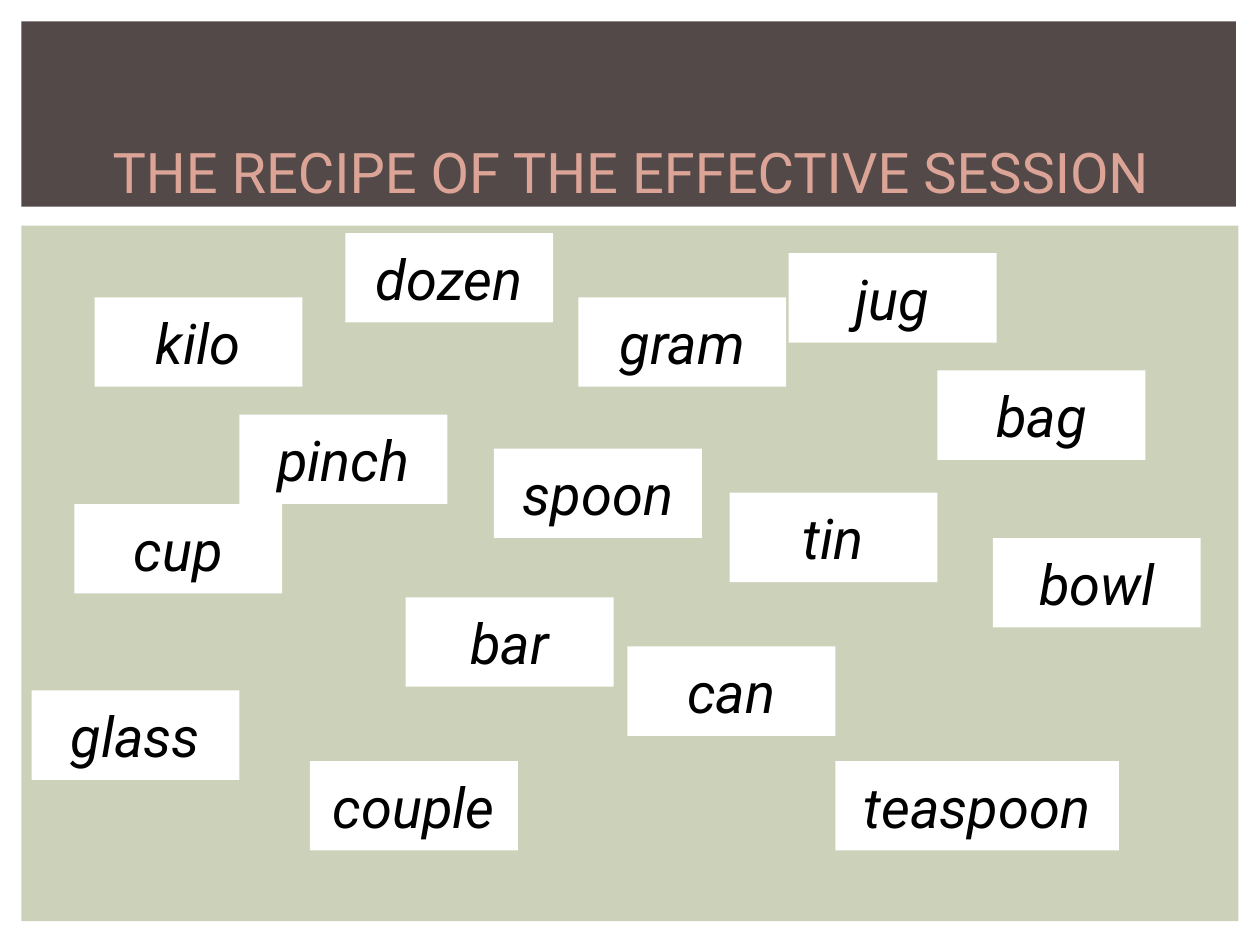
from pptx import Presentation
from pptx import util as u
from pptx.dml import color
from pptx.enum import shapes, text

COLUMNS, ROWS = 100, 75
CELL = u.Inches(10) // COLUMNS

BANNER = (1.7, 1.7, 96.4, 14.7)
BOARD = (1.7, 17.9, 96.6, 55.2)
CARD_WIDTH, CARD_HEIGHT = 16.5, 7.1
WIDE_CARDS = {"teaspoon": 22.5}
MEASURES = {
    "kilo": (5.8, 5.7),
    "spoon": (37.5, 17.7),
    "jug": (60.9, 2.2),
    "pinch": (17.3, 15),
    "dozen": (25.7, 0.6),
    "bag": (72.7, 11.5),
    "tin": (56.2, 21.2),
    "cup": (4.2, 22.1),
    "bar": (30.5, 29.5),
    "bowl": (77.1, 24.8),
    "can": (48.1, 33.4),
    "glass": (0.8, 36.9),
    "couple": (22.9, 42.5),
    "teaspoon": (64.6, 42.5),
    "gram": (44.2, 5.7),
}


def rgb(code):
    """Turn a hex string into a colour."""
    return color.RGBColor.from_string(code)


def cells(*counts):
    """Turn grid cells into slide lengths."""
    return [u.Emu(round(count * CELL)) for count in counts]


def panel(slide, box, fill):
    """Add a plain filled rectangle over a box of the grid."""
    rectangle = slide.shapes.add_shape(shapes.MSO_SHAPE.RECTANGLE, *cells(*box))
    rectangle.shadow.inherit = False
    rectangle.fill.solid()
    rectangle.fill.fore_color.rgb = rgb(fill)
    rectangle.line.fill.background()
    return rectangle


def write(holder, words, ink="000000", size=32, italic=False, face="Roboto"):
    """Write centred words in a shape or placeholder."""
    frame = holder.text_frame
    frame.word_wrap = True
    frame.auto_size = text.MSO_AUTO_SIZE.NONE
    frame.vertical_anchor = text.MSO_ANCHOR.MIDDLE
    paragraph = frame.paragraphs[0]
    paragraph.alignment = text.PP_ALIGN.CENTER
    run = paragraph.add_run()
    run.text = words
    run.font.name = face
    run.font.size = u.Pt(size)
    run.font.italic = italic
    run.font.color.rgb = rgb(ink)


def add_banner(slide, box, heading):
    """Draw the dark banner with the title along its lower edge."""
    panel(slide, box, "534949")
    title = slide.shapes.title
    slide.shapes.element.append(title.element)
    left, top = box[:2]
    title.left, title.top, title.width, title.height = cells(
        left - 1.6, top + 7.5, COLUMNS, 8.8)
    write(title, heading, ink="DCA496")


def add_board(slide, box, measures):
    """Draw the green board with a white card for each measure."""
    panel(slide, box, "CCD1B9")
    left, top = box[:2]
    for measure, (across, down) in measures.items():
        width = WIDE_CARDS.get(measure, CARD_WIDTH)
        card = panel(slide, (left + across, top + down, width, CARD_HEIGHT), "FFFFFF")
        write(card, measure, italic=True)


def main():
    """Build the slide and save it."""
    deck = Presentation()
    deck.slide_width, deck.slide_height = cells(COLUMNS, ROWS)
    slide = deck.slides.add_slide(deck.slide_layouts.get_by_name("Title Only"))
    add_banner(slide, BANNER, "THE RECIPE OF THE EFFECTIVE SESSION")
    add_board(slide, BOARD, MEASURES)
    deck.save("out.pptx")


if __name__ == "__main__":
    main()
